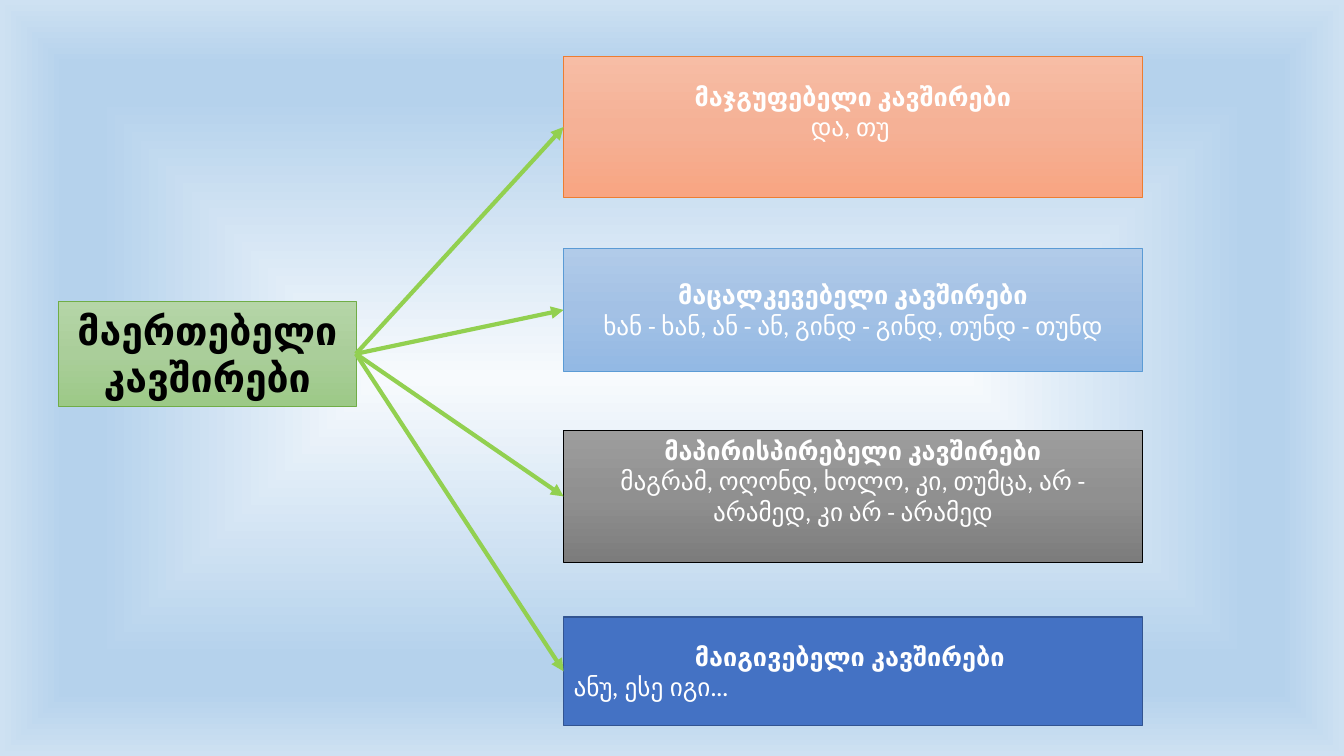
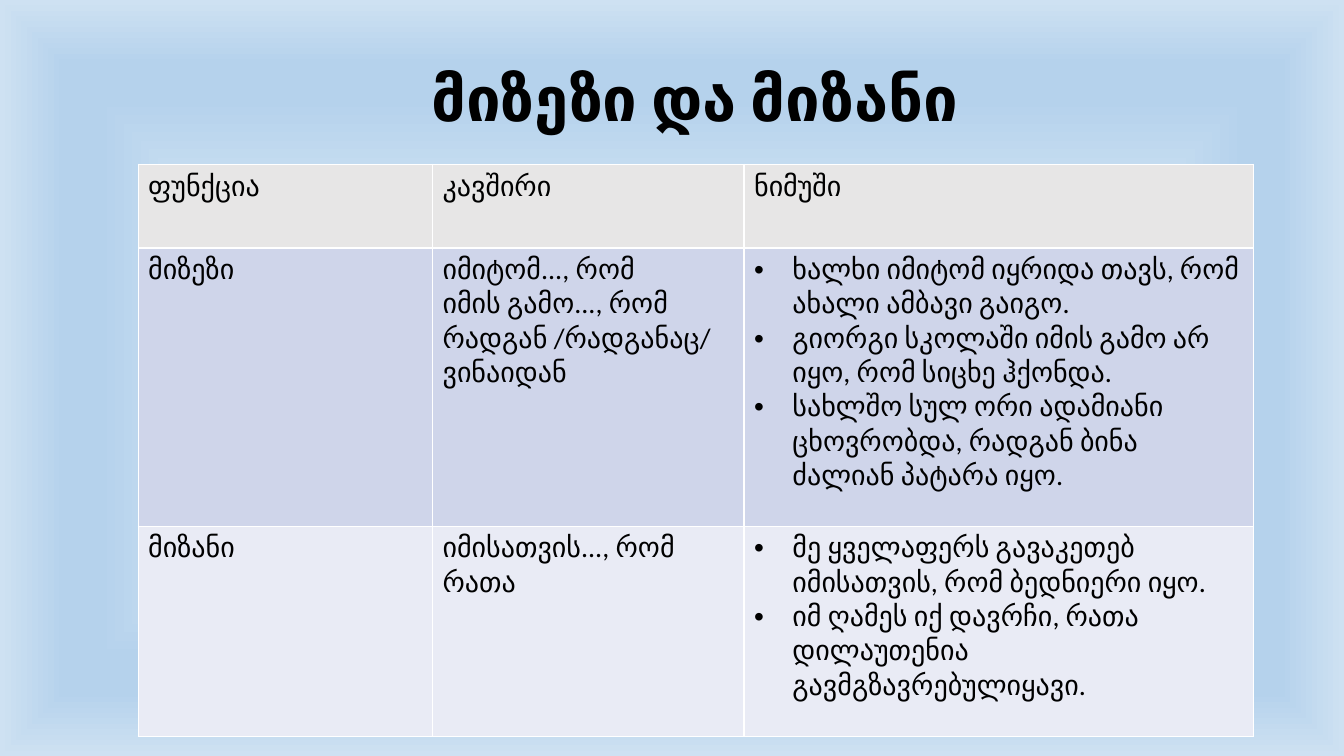
from lxml import etree
from pptx import Presentation
from pptx.dml.color import RGBColor
from pptx.enum.shapes import MSO_CONNECTOR, MSO_SHAPE
from pptx.enum.text import MSO_ANCHOR, PP_ALIGN
from pptx.oxml.ns import qn
from pptx.util import Emu, Inches, Pt

RECTANGLE, STRAIGHT = MSO_SHAPE.RECTANGLE, MSO_CONNECTOR.STRAIGHT
TOP, MIDDLE = MSO_ANCHOR.TOP, MSO_ANCHOR.MIDDLE
LEFT, CENTER = PP_ALIGN.LEFT, PP_ALIGN.CENTER
RIGHT_SIDE, LEFT_SIDE = 3, 1

WIDTH, HEIGHT = 13.33, 7.5
FONT = "Calibri"
BLACK, WHITE, ARROW = "000000", "FFFFFF", "92D050"
BACKDROP = [(0, "F7FAFD"), (74, "B5D2EC"), (83, "B5D2EC"), (100, "CEE1F2")]

ROOT = dict(text="მაერთებელი კავშირები", area=(0.58, 2.99, 2.95, 1.04),
            colors=["B5D5A7", "AACE9A", "9CC987"], edge="70AD47")
BRANCH_LEFT, BRANCH_WIDTH = 5.59, 5.74
BRANCHES = [
    dict(head="მაჯგუფებელი კავშირები", words="და, თუ ", top=0.56, height=1.4,
         colors=["F7BDA5", "F5B196", "F8A582"], edge="ED7D31", bottom=0.35),
    dict(head="მაცალკევებელი კავშირები",
         words="ხან - ხან, ან - ან, გინდ - გინდ, თუნდ - თუნდ", top=2.46, height=1.23,
         colors=["B1CBE9", "A3C1E5", "93B9E4"], edge="5B9BD5"),
    dict(head="მაპირისპირებელი კავშირები",
         words="მაგრამ, ოღონდ, ხოლო, კი, თუმცა, არ - არამედ, კი არ - არამედ",
         top=4.27, height=1.31, colors=["9D9D9D", "909090", "7C7C7C"],
         edge="000000", anchor=TOP),
    dict(head="მაიგივებელი კავშირები ", words="ანუ, ესე იგი...", top=6.12, height=1.08,
         colors=["4472C4"], edge="325491", edge_width=1, font="Lato", words_align=LEFT),
]

TITLE = "მიზეზი და მიზანი"
TABLE_AREA = (1.37, 1.63, 11.06, 5.69)
COLUMN_WIDTHS = [2.92, 3.09, 5.05]
ROWS = [
    (0.83, "E7E6E6", [["ფუნქცია"], ["კავშირი"], ["ნიმუში"]]),
    (2.76, "CFD5EA", [
        ["მიზეზი"],
        ["იმიტომ..., რომ", "იმის გამო..., რომ", "რადგან /რადგანაც/", "ვინაიდან"],
        ["ხალხი იმიტომ იყრიდა თავს, რომ ახალი ამბავი გაიგო.",
         "გიორგი სკოლაში იმის გამო არ იყო, რომ სიცხე ჰქონდა.",
         "სახლშო სულ ორი ადამიანი ცხოვრობდა, რადგან ბინა ძალიან პატარა იყო."]]),
    (2.09, "E9EBF5", [
        ["მიზანი"],
        ["იმისათვის..., რომ", "რათა"],
        ["მე ყველაფერს გავაკეთებ იმისათვის, რომ ბედნიერი იყო.",
         "იმ ღამეს იქ დავრჩი, რათა დილაუთენია გავმგზავრებულიყავი."]]),
]
EXAMPLES = 2


def rgb(value):
    return RGBColor.from_string(value)


def add(parent, tag, **attributes):
    return etree.SubElement(parent, qn(tag), {k: str(v) for k, v in attributes.items()})


def set_gradient(fill, owner, stops, centred=False):
    fill.gradient()
    gradient = owner.find(".//" + qn("a:gradFill"))
    for child in list(gradient):
        gradient.remove(child)
    stop_list = add(gradient, "a:gsLst")
    for position, color in stops:
        add(add(stop_list, "a:gs", pos=position * 1000), "a:srgbClr", val=color)
    if centred:
        shade = add(gradient, "a:path", path="shape")
        add(shade, "a:fillToRect", l=50000, t=50000, r=50000, b=50000)
    else:
        add(gradient, "a:lin", ang=5400000, scaled=0)


def write(frame, text, size=18, color=WHITE, bold=False, font=FONT, align=LEFT,
          spacing=None, bullet=False, first=False):
    paragraph = frame.paragraphs[0] if first else frame.add_paragraph()
    paragraph.alignment = align
    if spacing:
        paragraph.line_spacing = spacing
    if bullet:
        properties = paragraph._p.get_or_add_pPr()
        properties.set("marL", str(Inches(0.38)))
        properties.set("indent", str(-Inches(0.38)))
        add(properties, "a:buFont", typeface="Arial")
        add(properties, "a:buChar", char="•")
    run = paragraph.add_run()
    run.text = text
    run.font.size, run.font.bold, run.font.name = Pt(size), bold, font
    run.font.color.rgb = rgb(color)


def add_box(slide, area, colors, edge, edge_width=0.5, anchor=MIDDLE, bottom=0.05):
    box = slide.shapes.add_shape(RECTANGLE, *map(Inches, area))
    box.shadow.inherit = False
    if len(colors) == 1:
        box.fill.solid()
        box.fill.fore_color.rgb = rgb(colors[0])
    else:
        set_gradient(box.fill, box._element, list(zip((0, 50, 100), colors)))
    box.line.color.rgb = rgb(edge)
    box.line.width = Pt(edge_width)
    box.text_frame.word_wrap = True
    box.text_frame.vertical_anchor = anchor
    box.text_frame.margin_bottom = Inches(bottom)
    return box


def add_arrow(slide, source, target):
    arrow = slide.shapes.add_connector(STRAIGHT, Emu(0), Emu(0), Emu(0), Emu(0))
    arrow.begin_connect(source, RIGHT_SIDE)
    arrow.end_connect(target, LEFT_SIDE)
    arrow.line.color.rgb = rgb(ARROW)
    arrow.line.width = Pt(3)
    add(arrow.line._get_or_add_ln(), "a:tailEnd", type="triangle")
    add(arrow._element.spPr, "a:effectLst")


def set_borders(cell):
    properties = cell._tc.get_or_add_tcPr()
    for index, side in enumerate("LRTB"):
        border = etree.Element(qn("a:ln" + side), w=str(Pt(1)))
        add(add(border, "a:solidFill"), "a:srgbClr", val=WHITE)
        properties.insert(index, border)


def build_branches(slide):
    root = add_box(slide, ROOT["area"], ROOT["colors"], ROOT["edge"], anchor=TOP)
    write(root.text_frame, ROOT["text"], size=28, color=BLACK, bold=True,
          align=CENTER, first=True)
    for branch in BRANCHES:
        area = (BRANCH_LEFT, branch["top"], BRANCH_WIDTH, branch["height"])
        box = add_box(slide, area, branch["colors"], branch["edge"],
                      branch.get("edge_width", 0.5), branch.get("anchor", MIDDLE),
                      branch.get("bottom", 0.05))
        font = branch.get("font", FONT)
        write(box.text_frame, branch["head"], bold=True, font=font, align=CENTER, first=True)
        write(box.text_frame, branch["words"], font=font,
              align=branch.get("words_align", CENTER))
        add_arrow(slide, root, box)


def build_table(slide):
    title = slide.shapes.add_textbox(*map(Inches, (2.1, 0.6, 9.59, 0.82))).text_frame
    title.word_wrap = True
    title.vertical_anchor = MIDDLE
    write(title, TITLE, size=44, color=BLACK, bold=True, align=CENTER, spacing=0.9, first=True)

    table = slide.shapes.add_table(len(ROWS), len(COLUMN_WIDTHS),
                                   *map(Inches, TABLE_AREA)).table
    table.first_row = table.horz_banding = False
    for column, width in zip(table.columns, COLUMN_WIDTHS):
        column.width = Inches(width)
    for r, (height, color, entries) in enumerate(ROWS):
        table.rows[r].height = Inches(height)
        for c, lines in enumerate(entries):
            cell = table.cell(r, c)
            cell.fill.solid()
            cell.fill.fore_color.rgb = rgb(color)
            set_borders(cell)
            for i, line in enumerate(lines):
                write(cell.text_frame, line, size=20, color=BLACK,
                      bullet=r > 0 and c == EXAMPLES, first=i == 0)


def main():
    deck = Presentation()
    deck.slide_width, deck.slide_height = Inches(WIDTH), Inches(HEIGHT)
    master = deck.slide_master
    set_gradient(master.background.fill, master._element, BACKDROP, centred=True)
    blank = deck.slide_layouts[6]
    for build in (build_branches, build_table):
        build(deck.slides.add_slide(blank))
    deck.save("out.pptx")


if __name__ == "__main__":
    main()
